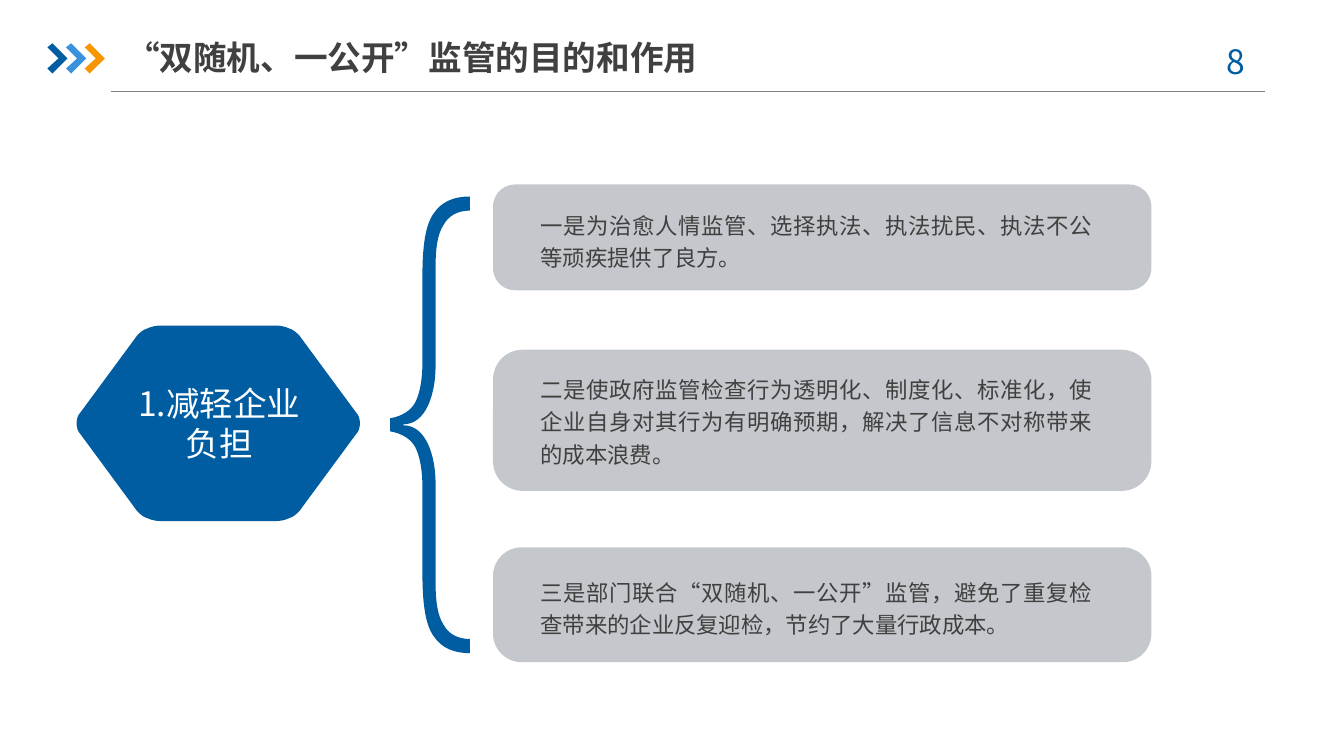
import pptx
import pptx.dml.color
import pptx.enum.shapes
import pptx.enum.text
import pptx.oxml
import pptx.oxml.ns
import pptx.util

Inches = pptx.util.Inches
ALIGN = pptx.enum.text.PP_ALIGN
ANCHOR = pptx.enum.text.MSO_ANCHOR
FONT = "Noto Sans CJK SC"
BLUE, SKY, ORANGE = "005DA2", "3992DB", "F79600"
INK, SILVER, GRAY, WHITE = "404040", "C4C7CB", "808080", "FFFFFF"


def color(value):
    return pptx.dml.color.RGBColor.from_string(value)


def paint(shape, fill):
    shape.fill.solid()
    shape.fill.fore_color.rgb = color(fill)
    shape.line.fill.background()
    shape.shadow.inherit = False


def add_text(slide, text, left, top, width, height, size=16, fill=INK, bold=False,
             align=ALIGN.LEFT, anchor=ANCHOR.TOP, spacing=1.0, grow=True, margin_y=0):
    box = slide.shapes.add_textbox(Inches(left), Inches(top), Inches(width), Inches(height))
    frame = box.text_frame
    frame.word_wrap = True
    fit = pptx.enum.text.MSO_AUTO_SIZE
    frame.auto_size = fit.SHAPE_TO_FIT_TEXT if grow else fit.NONE
    frame.vertical_anchor = anchor
    frame.margin_left = frame.margin_right = 0
    frame.margin_top = frame.margin_bottom = Inches(margin_y)
    paragraph = frame.paragraphs[0]
    paragraph.alignment = align
    paragraph.line_spacing = spacing
    run = paragraph.add_run()
    run.text = text
    run.font.size = pptx.util.Pt(size)
    run.font.bold = bold
    run.font.color.rgb = color(fill)
    run.font.name = FONT
    # East Asian typeface
    properties = run._r.get_or_add_rPr()
    properties.set("lang", "zh-CN")
    east_asian = pptx.oxml.parse_xml(
        f'<a:ea {pptx.oxml.ns.nsdecls("a")} typeface="{FONT}"/>')
    properties.find(pptx.oxml.ns.qn("a:latin")).addnext(east_asian)


def add_outline(slide, segments, left, top, fill):
    """Draw segments: the start, then lines of 1 point and Bezier curves of 3 points."""
    vertices = [(Inches(left + x), Inches(top + y)) for part in segments for x, y in part]
    builder = slide.shapes.build_freeform(*vertices[0])
    builder.add_line_segments(vertices[1:], close=True)
    outline = builder.convert_to_shape()
    paint(outline, fill)
    # Join the three points of each curve into one Bezier command
    lines = iter(list(outline._element.iter(pptx.oxml.ns.qn("a:lnTo"))))
    for segment in segments[1:]:
        commands = [next(lines) for _ in segment]
        if len(segment) == 3:
            curve = pptx.oxml.parse_xml(f'<a:cubicBezTo {pptx.oxml.ns.nsdecls("a")}/>')
            commands[0].addprevious(curve)
            for command in commands:
                curve.append(command[0])
                command.getparent().remove(command)


def mirror(segments, reflect):
    """Continue an outline with its reflection, drawn backwards."""
    points = [reflect(*point) for part in segments for point in part][::-1]
    joined = points[0] == segments[-1][-1]
    result = segments + ([] if joined else [[points[0]]])
    position = 1
    for segment in reversed(segments[1:]):
        result.append(points[position:position + len(segment)])
        position += len(segment)
    return result


def mirror_x(segments, width):
    return mirror(segments, lambda x, y: (round(width - x, 2), y))


def mirror_y(segments, height):
    return mirror(segments, lambda x, y: (x, round(height - y, 2)))


def add_header(slide, left, top, width):
    # Rule
    rule = slide.shapes.add_connector(
        pptx.enum.shapes.MSO_CONNECTOR.STRAIGHT, Inches(left + 0.63), Inches(top + 0.62),
        Inches(left + width), Inches(top + 0.62))
    rule.line.color.rgb = color(GRAY)
    rule.line.width = pptx.util.Pt(0.75)
    rule._element.spPr.append(
        pptx.oxml.parse_xml(f'<a:effectLst {pptx.oxml.ns.nsdecls("a")}/>'))
    # Chevrons
    corners = [(0, 0.04), (0.05, 0), (0.2, 0.15), (0.05, 0.3), (0, 0.25), (0.11, 0.15)]
    chevron = [[corner] for corner in corners]
    for index, fill in enumerate((BLUE, SKY, ORANGE)):
        add_outline(slide, chevron, left + 0.185 * index, top + 0.14, fill)
    # Page number and title
    add_text(slide, "8", left + width - 0.78, top + 0.07, 0.98, 0.5,
             size=24, fill=BLUE, align=ALIGN.CENTER, margin_y=0.05)
    add_text(slide, "“双随机、一公开”监管的目的和作用", left + 0.78, top, 6.28, 0.55,
             size=24, bold=True, anchor=ANCHOR.MIDDLE, grow=False, margin_y=0.05)


def add_topic(slide, left, top, width, height):
    quarter = [
        [(0, 0.97)],
        [(0, 0.93), (0.01, 0.89), (0.04, 0.86)],
        [(0.6, 0.1)],
        [(0.63, 0.07), (0.66, 0.04), (0.7, 0.03)],
        [(0.74, 0.01), (0.79, 0), (0.84, 0)],
    ]
    add_outline(slide, mirror_y(mirror_x(quarter, width), height), left, top, BLUE)
    add_text(slide, "1.减轻企业负担", left + 0.59, top + 0.57, 1.65, 0.81,
             size=24, fill=WHITE, align=ALIGN.CENTER)


def add_brace(slide, left, top, height):
    upper_half = [
        [(0, 2.2)],
        [(0.12, 2.18), (0.21, 2.12), (0.25, 2.04)],
        [(0.29, 1.96), (0.32, 1.83), (0.32, 1.64)],
        [(0.32, 0.78)],
        [(0.32, 0.49), (0.35, 0.28), (0.43, 0.17)],
        [(0.51, 0.05), (0.63, 0), (0.79, 0)],
        [(0.79, 0.14)],
        [(0.67, 0.14), (0.58, 0.19), (0.53, 0.28)],
        [(0.47, 0.37), (0.45, 0.51), (0.45, 0.7)],
        [(0.45, 1.68)],
        [(0.45, 1.95), (0.36, 2.26), (0.13, 2.26)],
    ]
    add_outline(slide, mirror_y(upper_half, height), left, top, BLUE)


def add_benefit(slide, text, left, top, width, height, text_top, text_height, rounding):
    card = slide.shapes.add_shape(
        pptx.enum.shapes.MSO_SHAPE.ROUNDED_RECTANGLE,
        Inches(left), Inches(top), Inches(width), Inches(height))
    card.adjustments[0] = rounding
    paint(card, SILVER)
    add_text(slide, text, left + 0.47, top + text_top, 5.48, text_height,
             align=ALIGN.JUSTIFY, spacing=1.2)


def main():
    deck = pptx.Presentation()
    deck.slide_width, deck.slide_height = Inches(13.33), Inches(7.5)
    slide = deck.slides.add_slide(deck.slide_layouts[6])

    add_header(slide, 0.47, 0.29, 12.08)
    add_topic(slide, 0.76, 3.23, 2.81, 1.94)
    add_brace(slide, 3.87, 1.95, 4.53)

    # Benefits: top, height, text offset, text height, corner rounding, wording
    benefits = [
        (1.83, 1.05, 0.22, 0.62, 0.21,
         "一是为治愈人情监管、选择执法、执法扰民、执法不公等顽疾提供了良方。"),
        (3.47, 1.4, 0.21, 0.97, 0.21,
         "二是使政府监管检查行为透明化、制度化、标准化，使企业自身对其行为有明确预期，"
         "解决了信息不对称带来的成本浪费。"),
        (5.43, 1.14, 0.26, 0.65, 0.25,
         "三是部门联合“双随机、一公开”监管，避免了重复检查带来的企业反复迎检，"
         "节约了大量行政成本。"),
    ]
    for top, height, text_top, text_height, rounding, text in benefits:
        add_benefit(slide, text, 4.89, top, 6.53, height, text_top, text_height, rounding)

    deck.save("out.pptx")


if __name__ == "__main__":
    main()
